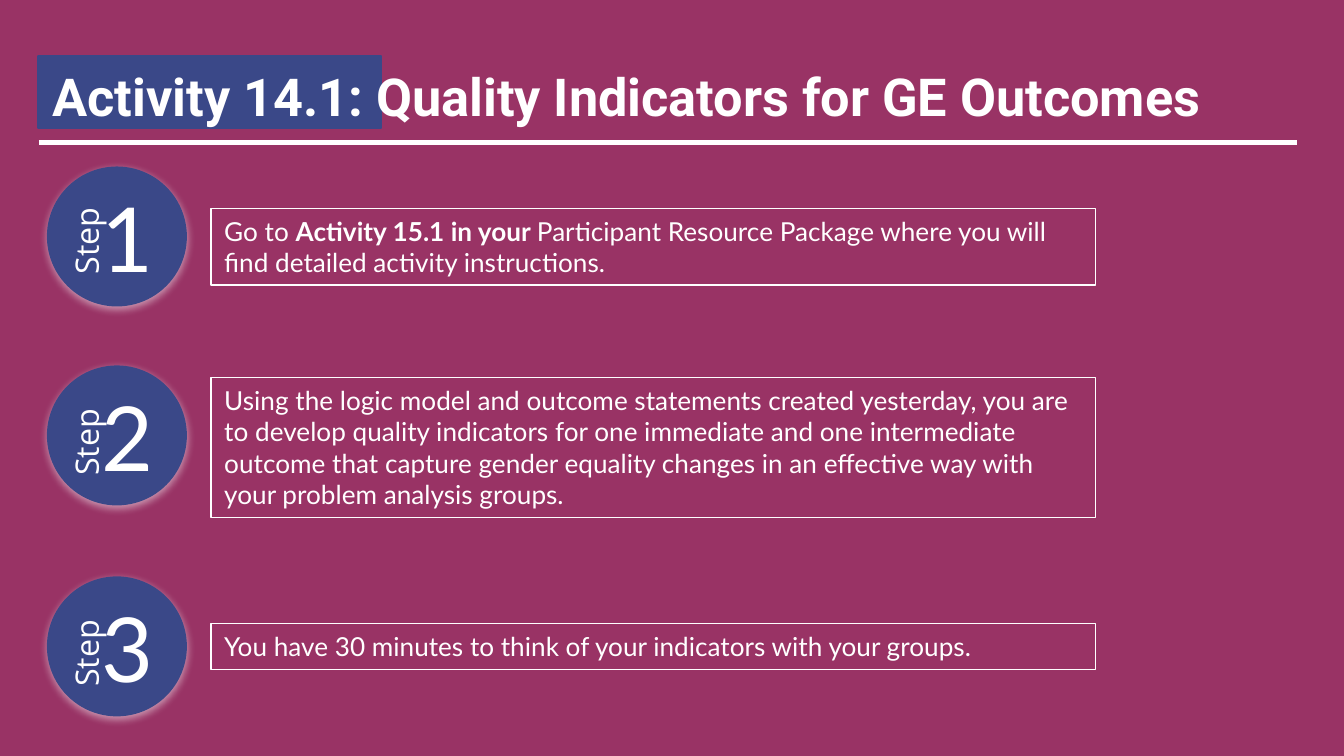
from lxml import etree
from pptx import Presentation
from pptx.dml.color import RGBColor
from pptx.enum.shapes import MSO_CONNECTOR, MSO_SHAPE
from pptx.enum.text import MSO_ANCHOR, MSO_AUTO_SIZE, PP_ALIGN
from pptx.oxml import parse_xml
from pptx.oxml.ns import nsdecls, qn
from pptx.util import Inches, Pt

RECT, OVAL = MSO_SHAPE.RECTANGLE, MSO_SHAPE.OVAL
TOP, MID = MSO_ANCHOR.TOP, MSO_ANCHOR.MIDDLE
LEFT, MIDDLE = PP_ALIGN.LEFT, PP_ALIGN.CENTER
PLUM, BLUE, WHITE = "993365", "3A4888", "FFFFFF"

# Content: circle top, label top, box top, box height, runs (text, bold)
TITLE = "Activity 14.1: Quality Indicators for GE Outcomes"
STEPS = [
    (1.26, 1.51, 1.55, 0.57, [
        ("Go to ", False), ("Activity 15.1 in your ", True),
        ("Participant Resource Package where you will find detailed "
         "activity instructions.", False)]),
    (2.74, 3.01, 2.81, 1.04, [
        ("Using the logic model and outcome statements created yesterday, "
         "you are to develop quality indicators for one immediate and one "
         "intermediate outcome that capture gender equality changes in an "
         "effective way with your problem analysis groups.", False)]),
    (4.31, 4.58, 4.64, 0.34, [
        ("You have 30 minutes to think of your indicators with your groups.",
         False)]),
]
PAD = (0.1, 0.05, 0.1, 0.05)
HEAD = {"name": "Roboto", "size": Pt(28)}
DIGIT = {"name": "Lato", "size": Pt(48)}
LABEL = {"name": "Open Sans", "size": Pt(17.3)}
BODY = {"name": "Lato", "size": Pt(14)}


def color(code):
    return RGBColor.from_string(code)


def box(nums):
    return [Inches(n) for n in nums]


def write(shape, runs, font, pad, align=LEFT, anchor=TOP):
    frame = shape.text_frame
    frame.word_wrap = True
    frame.auto_size = MSO_AUTO_SIZE.NONE
    frame.vertical_anchor = anchor
    for side, gap in zip(("left", "top", "right", "bottom"), pad):
        setattr(frame, "margin_" + side, Inches(gap))
    para = frame.paragraphs[0]
    para.alignment = align
    for text, bold in runs:
        run = para.add_run()
        run.text = text
        for key, value in {**font, "bold": bold}.items():
            setattr(run.font, key, value)
        run.font.color.rgb = color(WHITE)


def draw(parent, kind, place, fill, line, width):
    shape = parent.shapes.add_shape(kind, *box(place))
    shape.shadow.inherit = False
    if fill:
        shape.fill.solid()
        shape.fill.fore_color.rgb = color(fill)
    else:
        shape.fill.background()
    shape.line.color.rgb = color(line)
    shape.line.width = Pt(width)
    return shape


def glow(shape):
    effects = shape._element.spPr.find(qn("a:effectLst"))
    effects.append(parse_xml(
        f'<a:outerShdw {nsdecls("a")} blurRad="{Pt(4.5)}" dist="{Pt(1.5)}" '
        f'dir="5400000" rotWithShape="0"><a:srgbClr val="{WHITE}">'
        '<a:alpha val="49000"/></a:srgbClr></a:outerShdw>'))


# Widescreen page, 16:9
deck = Presentation()
deck.slide_width = Inches(10)
deck.slide_height = deck.slide_width * 9 // 16
slide = deck.slides.add_slide(deck.slide_layouts[5])
slide.background.fill.solid()
slide.background.fill.fore_color.rgb = color(PLUM)

# Heading: rule, blue block, then the title in front of them
rule = slide.shapes.add_connector(
    MSO_CONNECTOR.STRAIGHT, *box((0.29, 1.06, 9.65, 1.06)))
rule.line.color.rgb = color(WHITE)
rule.line.width = Pt(3)
etree.SubElement(rule._element.spPr, qn("a:effectLst"))
draw(slide, RECT, (0.29, 0.42, 2.54, 0.53), BLUE, BLUE, 2)
title = slide.shapes.title
title.left, title.top, title.width, title.height = box((0.29, 0.43, 12.79, 0.57))
write(title, [(TITLE, True)], HEAD, PAD)
slide.shapes._spTree.append(title._element)

# Step badges: numbered disc with an upright label
for num, (disc_top, label_top, *_) in enumerate(STEPS, 1):
    badge = slide.shapes.add_group_shape()
    disc = draw(badge, OVAL, (0.37, disc_top, 1, 1), BLUE, BLUE, 3)
    glow(disc)
    write(disc, [(" ", True), (str(num), False)], DIGIT, (0,) * 4, MIDDLE, MID)
    label = badge.shapes.add_textbox(*box((0.11, label_top, 1.01, 0.5)))
    label.rotation = 270
    write(label, [("Step ", False)], LABEL, (0.13,) * 4, MIDDLE)

# Instructions
for *_, top, height, runs in STEPS:
    note = draw(slide, RECT, (1.57, top, 6.58, height), None, WHITE, 0.75)
    write(note, runs, BODY, PAD)

deck.save("out.pptx")
